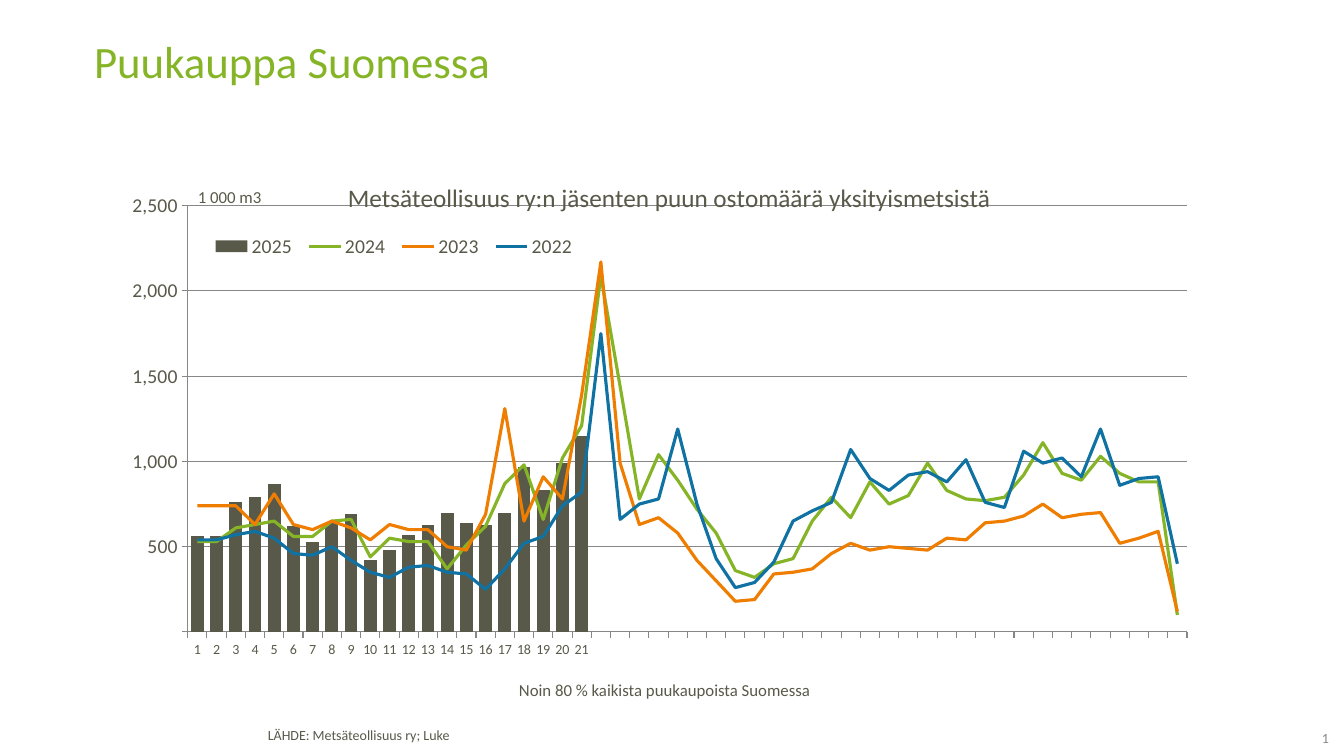
from copy import deepcopy
from dataclasses import dataclass

from lxml import etree
from pptx import Presentation, util as u
from pptx.chart.data import CategoryChartData
from pptx.dml.color import RGBColor
from pptx.enum import chart as ch, text
from pptx.oxml import parse_xml
from pptx.oxml.ns import nsdecls, qn

COLS, ROWS = 160, 90
WEEKS = 52
UNIT = 1000  # weekly purchases below are in 1 000 m3


@dataclass(frozen=True)
class Theme:
    font: str = "Calibri"
    green: str = "85B526"
    grey: str = "59594A"
    orange: str = "EF7D00"
    blue: str = "0F72A2"
    footer: str = "58594A"
    muted: str = "878787"
    heading: int = 32
    chart_title: int = 18
    axis: int = 14
    note: int = 12
    small: int = 10
    curve: float = 2.25
    rule: float = 0.75


@dataclass(frozen=True)
class Box:
    """A place on the slide in grid columns and rows."""
    col: float
    row: float
    cols: float
    rows: float


@dataclass(frozen=True)
class Label:
    words: str
    box: Box
    size: int
    color: str
    spacing: float = 1.0
    page_number: bool = False


@dataclass(frozen=True)
class Year:
    name: str
    color: str
    volumes: tuple[int, ...]


T = Theme()

LABELS = (
    Label("LÄHDE: Metsäteollisuus ry; Luke", Box(30.7, 86.2, 86.2, 3.2), T.small, T.footer, 0.85),
    Label("1", Box(151.8, 86.9, 6.4, 2.3), T.small, T.muted, page_number=True),
    Label("Noin 80 % kaikista puukaupoista Suomessa", Box(60.6, 80.3, 39.4, 3.7), T.note, T.grey),
)

YEARS = (
    Year("2025", T.grey, (
        560, 560, 760, 790, 870, 620, 530, 640, 690, 420, 480, 570, 630,
        700, 640, 630, 700, 970, 830, 990, 1150)),
    Year("2024", T.green, (
        530, 530, 610, 630, 650, 560, 560, 650, 660, 440, 550, 530, 530,
        370, 510, 620, 870, 980, 660, 1020, 1210, 2090, 1440, 780, 1040, 890,
        720, 580, 360, 320, 400, 430, 650, 790, 670, 880, 750, 800, 990,
        830, 780, 770, 790, 920, 1110, 930, 890, 1030, 930, 880, 880, 100)),
    Year("2023", T.orange, (
        740, 740, 740, 630, 810, 630, 600, 650, 610, 540, 630, 600, 600,
        500, 480, 690, 1310, 650, 910, 780, 1390, 2170, 990, 630, 670, 580,
        420, 300, 180, 190, 340, 350, 370, 460, 520, 480, 500, 490, 480,
        550, 540, 640, 650, 680, 750, 670, 690, 700, 520, 550, 590, 120)),
    Year("2022", T.blue, (
        540, 540, 570, 590, 550, 460, 450, 500, 420, 350, 320, 380, 390,
        350, 340, 250, 370, 520, 560, 740, 820, 1750, 660, 750, 780, 1190,
        750, 430, 260, 290, 410, 650, 710, 760, 1070, 900, 830, 920, 940,
        880, 1010, 760, 730, 1060, 990, 1020, 910, 1190, 860, 900, 910, 400)),
)


def emu(prs, box: Box) -> tuple[int, ...]:
    w, h = prs.slide_width / COLS, prs.slide_height / ROWS
    return tuple(round(v) for v in (box.col * w, box.row * h, box.cols * w, box.rows * h))


def style(font, size: int, color: str) -> None:
    font.name, font.size, font.bold = T.font, u.Pt(size), False
    font.color.rgb = RGBColor.from_string(color)


def add_words(tf, words: str, size: int, color: str):
    p = tf.paragraphs[0]
    r = p.add_run()
    r.text = words
    style(r.font, size, color)
    return p, r


def add_heading(prs, s, words: str, box: Box) -> None:
    sp = s.shapes.title
    sp.left, sp.top, sp.width, sp.height = emu(prs, box)
    tf = sp.text_frame
    tf.vertical_anchor = text.MSO_ANCHOR.TOP
    tf.auto_size = text.MSO_AUTO_SIZE.NONE
    p, _ = add_words(tf, words, T.heading, T.green)
    p.alignment, p.line_spacing = text.PP_ALIGN.LEFT, 0.8


def add_label(prs, s, label: Label) -> None:
    tf = s.shapes.add_textbox(*emu(prs, label.box)).text_frame
    tf.word_wrap = True
    p, r = add_words(tf, label.words, label.size, label.color)
    p.line_spacing = label.spacing
    if label.page_number:
        tf.margin_left = tf.margin_top = tf.margin_right = 0
        tf.margin_bottom = u.Inches(0.04)
        tf.vertical_anchor = text.MSO_ANCHOR.MIDDLE
        p.alignment = text.PP_ALIGN.RIGHT
        r._r.tag = qn("a:fld")
        r._r.set("id", "{B6F15528-21DE-4FAA-801E-634DDDAF4B2B}")
        r._r.set("type", "slidenum")


def place(part, index: int, target: str = "", **percent: float) -> None:
    """Give a chart part a fixed place, in percent of the chart."""
    for old in part.findall(qn("c:layout")):
        part.remove(old)
    layout = parse_xml(f"<c:layout {nsdecls('c')}><c:manualLayout/></c:layout>")
    manual = layout[0]
    settings = {"layoutTarget": target} if target else {}
    settings |= {"xMode": "edge", "yMode": "edge"}
    settings |= {k: str(round(v / 100, 4)) for k, v in percent.items()}
    for tag, value in settings.items():
        etree.SubElement(manual, qn(f"c:{tag}")).set("val", value)
    part.insert(index, layout)


def split_lines(bars) -> None:
    """Move every series but the first to a line plot on the same axes."""
    lines = parse_xml(
        f'<c:lineChart {nsdecls("c")}><c:grouping val="standard"/><c:varyColors val="0"/>'
        '<c:marker val="1"/></c:lineChart>')
    for ser in bars.findall(qn("c:ser"))[1:]:
        for flag in ser.findall(qn("c:invertIfNegative")):
            ser.remove(flag)
        lines.insert(len(lines) - 1, ser)
    for axis in bars.findall(qn("c:axId")):
        lines.append(deepcopy(axis))
    bars.addnext(lines)


def draw_rule(line) -> None:
    line.width = u.Pt(T.rule)
    line.color.rgb = RGBColor.from_string(T.muted)


def format_axes(chart) -> None:
    weeks, volume = chart.category_axis, chart.value_axis
    for axis, size in ((weeks, T.small), (volume, T.axis)):
        axis.major_tick_mark = ch.XL_TICK_MARK.OUTSIDE
        style(axis.tick_labels.font, size, T.grey)
        draw_rule(axis.format.line)
    weeks.has_major_gridlines = False
    volume.has_major_gridlines = True
    draw_rule(volume.major_gridlines.format.line)
    volume.minimum_scale, volume.maximum_scale, volume.major_unit = 0, 2500 * UNIT, 500 * UNIT
    volume.tick_labels.number_format = "#,###,"
    volume.tick_labels.number_format_is_linked = False
    title = volume.axis_title
    add_words(title.text_frame, "1 000 m3", T.note, T.grey)
    body = title.text_frame._txBody.find(qn("a:bodyPr"))
    body.set("rot", "0")
    body.set("vert", "horz")
    place(title._element, 1, x=9.4, y=4.8)


def add_purchases(prs, s, box: Box) -> None:
    data = CategoryChartData(number_format="0")
    data.categories = [str(week) for week in range(1, WEEKS + 1)]
    for year in YEARS:
        missing = [None] * (WEEKS - len(year.volumes))
        data.add_series(year.name, [v * UNIT for v in year.volumes] + missing)
    chart = s.shapes.add_chart(ch.XL_CHART_TYPE.COLUMN_CLUSTERED, *emu(prs, box), data).chart
    style(chart.font, T.small, T.grey)

    plot_area = chart._chartSpace.chart.plotArea
    bars = plot_area.find(qn("c:barChart"))
    split_lines(bars)
    place(plot_area, 0, "inner", x=8.8, y=9.2, w=84.8, h=82)
    # Only the weeks reported this year carry a label.
    for pt in bars.findall(f".//{qn('c:cat')}//{qn('c:pt')}")[len(YEARS[0].volumes):]:
        pt.getparent().remove(pt)

    column, lines = chart.plots
    column.gap_width, column.vary_by_categories = 50, False
    fill = column.series[0].format.fill
    fill.solid()
    fill.fore_color.rgb = RGBColor.from_string(YEARS[0].color)
    for ser, year in zip(lines.series, YEARS[1:]):
        ser.smooth = False
        ser.marker.style = ch.XL_MARKER_STYLE.NONE
        ser.format.line.width = u.Pt(T.curve)
        ser.format.line.color.rgb = RGBColor.from_string(year.color)

    format_axes(chart)
    chart.has_title = True
    title = chart.chart_title
    add_words(title.text_frame, "Metsäteollisuus ry:n jäsenten puun ostomäärä yksityismetsistä",
              T.chart_title, T.grey)
    place(title._element, 1, x=22, y=3.4)
    title._element.find(qn("c:overlay")).set("val", "1")
    chart.has_legend = True
    chart.legend.position = ch.XL_LEGEND_POSITION.RIGHT
    chart.legend.include_in_layout = False
    style(chart.legend.font, T.axis, T.grey)
    place(chart.legend._element, 1, x=10.3, y=14, w=32, h=6)


def main() -> None:
    prs = Presentation()
    prs.slide_width, prs.slide_height = u.Inches(13.33), u.Inches(7.5)
    s = prs.slides.add_slide(prs.slide_layouts[5])
    add_heading(prs, s, "Puukauppa Suomessa", Box(10, 4.7, 140.3, 11.8))
    add_purchases(prs, s, Box(10, 18.8, 140.3, 61.9))
    for label in LABELS:
        add_label(prs, s, label)
    prs.save("out.pptx")


if __name__ == "__main__":
    main()
